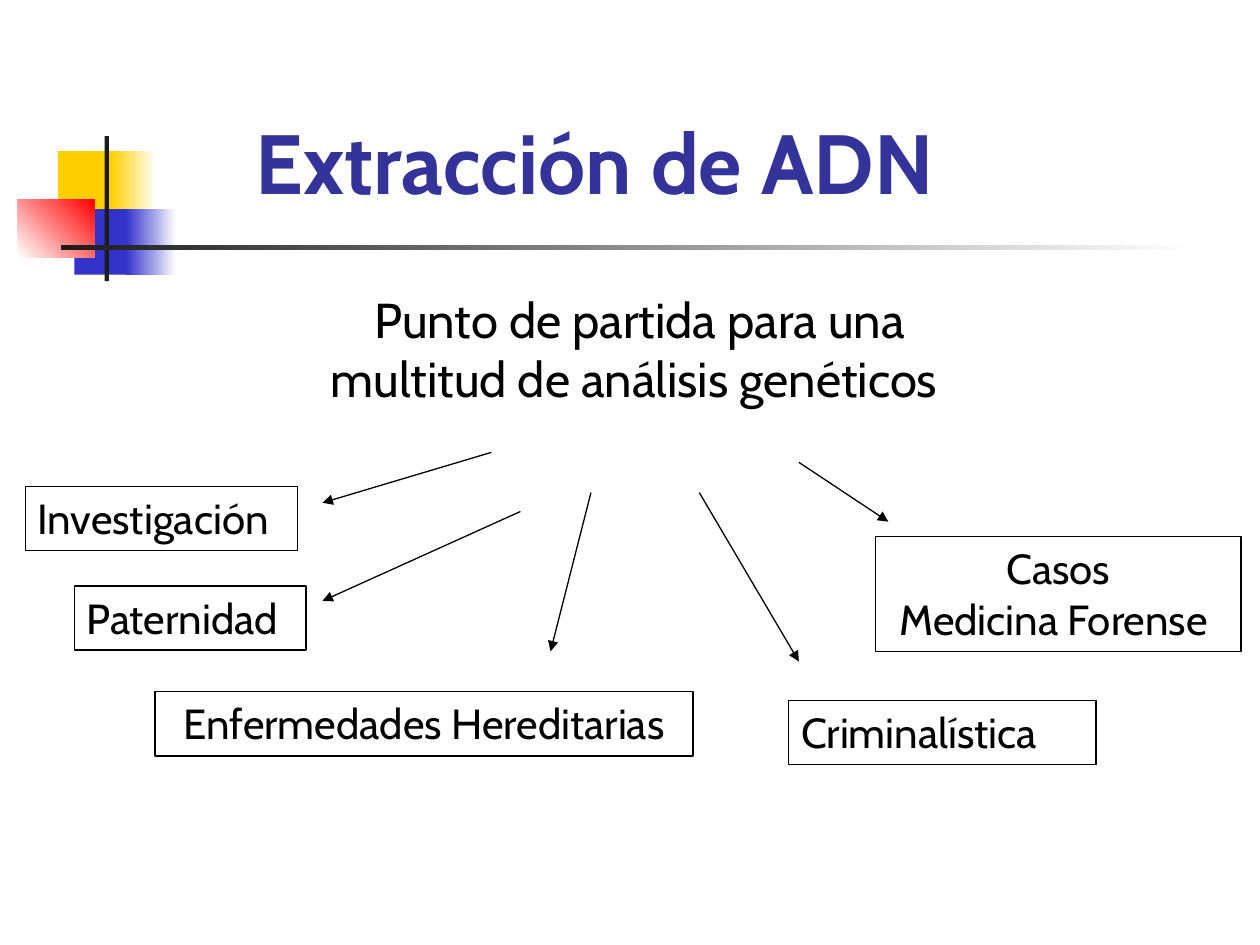
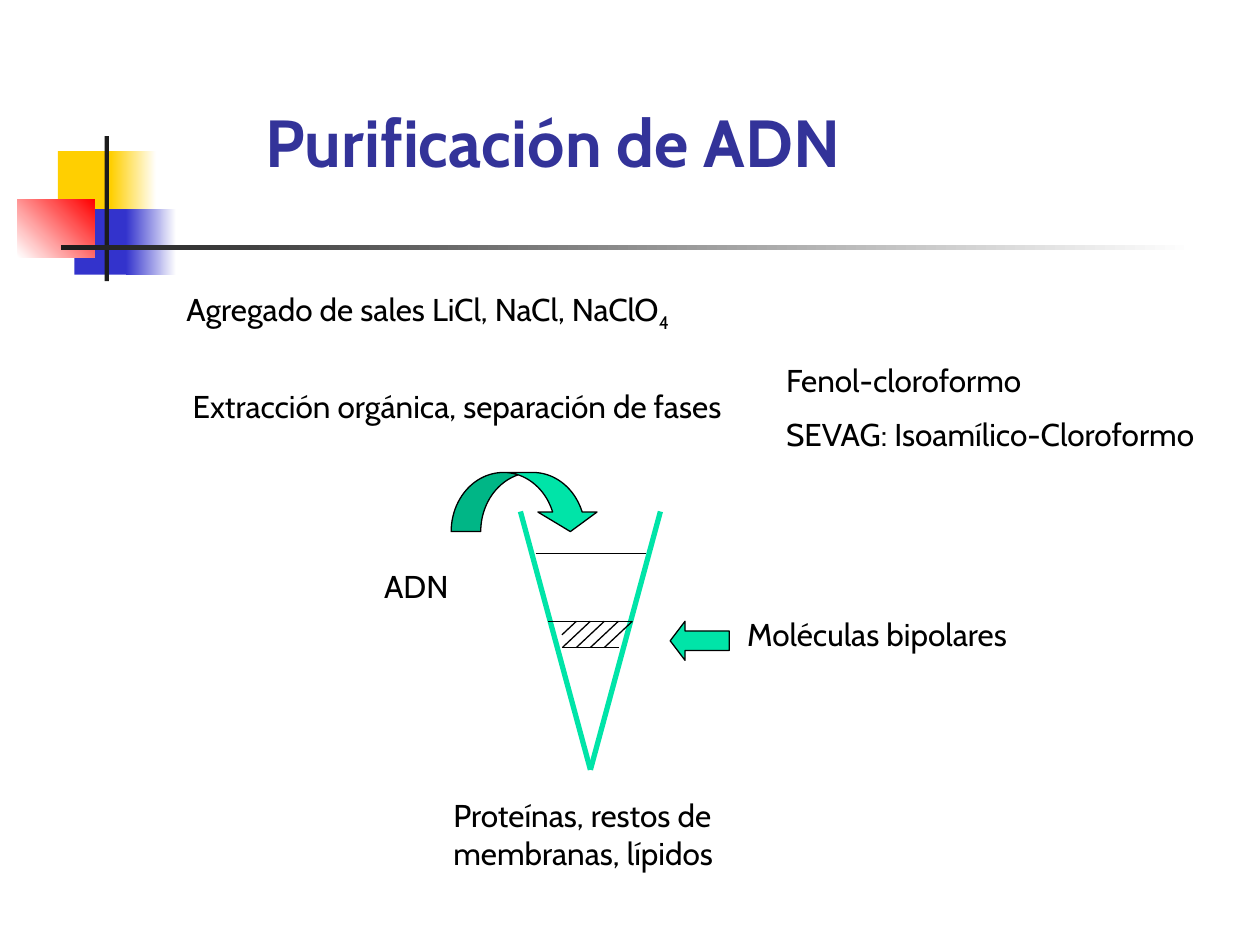
from typing import NamedTuple

from lxml import etree
from pptx import Presentation
from pptx.dml.color import RGBColor
from pptx.enum.shapes import MSO_CONNECTOR, MSO_SHAPE
from pptx.enum.text import MSO_ANCHOR, PP_ALIGN
from pptx.oxml.ns import qn
from pptx.util import Pt

RECT = MSO_SHAPE.RECTANGLE
CURVED = MSO_SHAPE.CURVED_DOWN_ARROW
LEFTWARD = MSO_SHAPE.LEFT_ARROW
STRAIGHT = MSO_CONNECTOR.STRAIGHT
LEFT, CENTER = PP_ALIGN.LEFT, PP_ALIGN.CENTER
TOP, MIDDLE = MSO_ANCHOR.TOP, MSO_ANCHOR.MIDDLE

BLACK = RGBColor(0x00, 0x00, 0x00)
WHITE = RGBColor(0xFF, 0xFF, 0xFF)
DARK = RGBColor(0x1C, 0x1C, 0x1C)
YELLOW = RGBColor(0xFF, 0xCF, 0x01)
BLUE = RGBColor(0x33, 0x33, 0xCC)
RED = RGBColor(0xFF, 0x00, 0x00)
NAVY = RGBColor(0x33, 0x33, 0x99)
GREEN = RGBColor(0x00, 0xE4, 0xA8)

FONT = "Cabin"
THIN, THICK = 0.75, 3


class Area(NamedTuple):
    left: float
    top: float
    width: float
    height: float


class Block(NamedTuple):
    area: Area
    start: RGBColor
    end: RGBColor | None = None
    angle: float = 0


class Label(NamedTuple):
    area: Area
    lines: tuple[str, ...]
    size: float = 18
    align: PP_ALIGN = LEFT
    framed: bool = False
    sub: str = ""


class Line(NamedTuple):
    x1: float
    y1: float
    x2: float
    y2: float
    color: RGBColor = BLACK
    width: float = THIN
    arrow: bool = False


# Emblem and rules shared by both slides
EMBLEM = (
    Block(Area(33.1, 86.4, 34.6, 37.4), YELLOW),
    Block(Area(63.4, 86.4, 25.9, 37.4), YELLOW, WHITE),
    Block(Area(42.5, 119.5, 33.1, 37.4), BLUE),
    Block(Area(72, 119.5, 28.8, 37.4), BLUE, WHITE),
    Block(Area(10.1, 113.8, 43.9, 33.1), WHITE, RED, 45),
    Block(Area(59.8, 77.8, 2.5, 82.8), DARK),
    Block(Area(34.6, 140.2, 648, 2.5), DARK, WHITE),
)

# Uses of DNA extraction
USES = (
    Label(Area(42.5, 334.8, 132.5, 36.7), ("Paternidad",), 24, framed=True),
    Label(Area(500.4, 306.7, 208.8, 65.5), ("Casos", "Medicina Forense "),
          24, CENTER, True),
    Label(Area(450.7, 400.3, 175.7, 36.7), ("Criminalística",), 24, framed=True),
    Label(Area(88.6, 395.3, 307.4, 36.7), ("Enfermedades Hereditarias",),
          24, CENTER, True),
    Label(Area(14.4, 277.9, 155.5, 36.7), ("Investigación",), 24, framed=True),
)
ARROWS = (
    Line(297.4, 292.3, 184.3, 343.4, arrow=True),
    Line(337.7, 281.5, 314.6, 372.2, arrow=True),
    Line(399.6, 281.5, 456.5, 378, arrow=True),
    Line(456.5, 264.2, 507.6, 298.1, arrow=True),
    Line(280.8, 258.5, 184.3, 287.3, arrow=True),
)

# Notes around the tube
NOTES = (
    Label(Area(99.4, 162, 493.2, 28.8),
          ("Agregado de sales LiCl, NaCl, NaClO",), sub="4"),
    Label(Area(103, 217.4, 342.7, 28.8),
          ("Extracción orgánica, separación de fases",)),
    Label(Area(252, 451.4, 164.2, 72),
          ("Proteínas, restos de membranas, lípidos",)),
    Label(Area(419.8, 347.8, 172.1, 28.8), ("Moléculas bipolares",)),
    Label(Area(212.4, 320.4, 67.7, 28.8), ("ADN",)),
    Label(Area(442.1, 203, 275, 61.2),
          ("Fenol-cloroformo", "SEVAG: Isoamílico-Cloroformo")),
)

# Tube measures: axis, rim, tip and the striped layer
AXIS, RIM, TIP, HALF = 337.4, 292.3, 439.9, 40
UPPER, LOWER = 355, 370
LEVELS = ((316.1, 306, 369.4), (UPPER, 313.2, 361.4), (LOWER, 321.1, 353.5))
EDGE, END, STEP, RUN = 321.1, 361.4, 8, 16


def place(area: Area) -> tuple[Pt, ...]:
    return tuple(Pt(value) for value in area)


def add_block(slide, block: Block) -> None:
    shape = slide.shapes.add_shape(RECT, *place(block.area))
    shape.shadow.inherit = False
    shape.line.fill.background()
    if block.end is None:
        shape.fill.solid()
        shape.fill.fore_color.rgb = block.start
        return
    shape.fill.gradient()
    shape.fill.gradient_angle = block.angle
    for stop, color in zip(shape.fill.gradient_stops, (block.start, block.end)):
        stop.color.rgb = color


def add_label(slide, label: Label, color: RGBColor = BLACK,
              bold: bool = False, anchor: MSO_ANCHOR = TOP) -> None:
    if label.framed:
        shape = slide.shapes.add_shape(RECT, *place(label.area))
        shape.shadow.inherit = False
        shape.fill.background()
        shape.line.color.rgb = BLACK
        shape.line.width = Pt(THIN)
    else:
        shape = slide.shapes.add_textbox(*place(label.area))
    frame = shape.text_frame
    frame.word_wrap = True
    frame.vertical_anchor = anchor
    frame.text = "\n".join(label.lines)
    if label.sub:
        run = frame.paragraphs[-1].add_run()
        run.text = label.sub
        run._r.get_or_add_rPr().set("baseline", "-25000")
    for index, para in enumerate(frame.paragraphs):
        para.alignment = label.align
        if index and not label.framed:
            para.space_before = Pt(label.size / 2)
        for run in para.runs:
            run.font.name = FONT
            run.font.size = Pt(label.size)
            run.font.bold = bold
            run.font.color.rgb = color


def add_line(shapes, line: Line) -> None:
    link = shapes.add_connector(STRAIGHT, Pt(line.x1), Pt(line.y1),
                                Pt(line.x2), Pt(line.y2))
    link.line.color.rgb = line.color
    link.line.width = Pt(line.width)
    if line.arrow:
        etree.SubElement(link.get_or_add_ln(), qn("a:tailEnd"),
                         type="triangle")
    etree.SubElement(link._element.spPr, qn("a:effectLst"))


def add_arrow(slide, kind: MSO_SHAPE, area: Area, *ratios: float) -> None:
    shape = slide.shapes.add_shape(kind, *place(area))
    shape.shadow.inherit = False
    for index, ratio in enumerate(ratios):
        shape.adjustments[index] = ratio
    shape.fill.solid()
    shape.fill.fore_color.rgb = GREEN
    shape.line.color.rgb = BLACK
    shape.line.width = Pt(THIN)


def add_tube(slide) -> None:
    shapes = slide.shapes.add_group_shape().shapes
    for side in (-HALF, HALF):
        add_line(shapes, Line(AXIS + side, RIM, AXIS, TIP, GREEN, THICK))
    for y, left, right in LEVELS:
        add_line(shapes, Line(left, y, right, y))
    # Slanted stripes, cut off at the left edge of the layer
    for index in range(5):
        x = END - index * STEP
        run = min(RUN, x - EDGE)
        drop = (LOWER - UPPER) * run / RUN
        add_line(shapes, Line(x, UPPER, x - run, UPPER + drop))


def add_slide(deck, title: Label):
    slide = deck.slides.add_slide(deck.slide_layouts[6])
    for block in EMBLEM:
        add_block(slide, block)
    add_label(slide, title, NAVY, True, MIDDLE)
    return slide


def add_uses(deck) -> None:
    slide = add_slide(deck, Label(Area(139, 60.5, 487.4, 62.6),
                                  ("Extracción de ADN",), 48))
    add_label(slide, Label(
        Area(172.8, 162, 385.2, 108.7),
        ("Punto de partida para una multitud de análisis genéticos ",),
        28, CENTER))
    for use in USES:
        add_label(slide, use)
    for arrow in ARROWS:
        add_line(slide.shapes, arrow)


def add_phases(deck) -> None:
    slide = add_slide(deck, Label(Area(99.4, 49, 433.4, 62.6),
                                  ("Purificación de ADN",), 38, CENTER))
    for note in NOTES:
        add_label(slide, note)
    add_tube(slide)
    add_arrow(slide, CURVED, Area(257.8, 270, 85, 33.8), 0.5, 1, 0.33)
    add_arrow(slide, LEFTWARD, Area(383, 355, 33.8, 22.3), 0.5, 0.38)


def main() -> None:
    deck = Presentation()
    deck.slide_width, deck.slide_height = Pt(720), Pt(540)
    add_uses(deck)
    add_phases(deck)
    deck.save("out.pptx")


if __name__ == "__main__":
    main()
